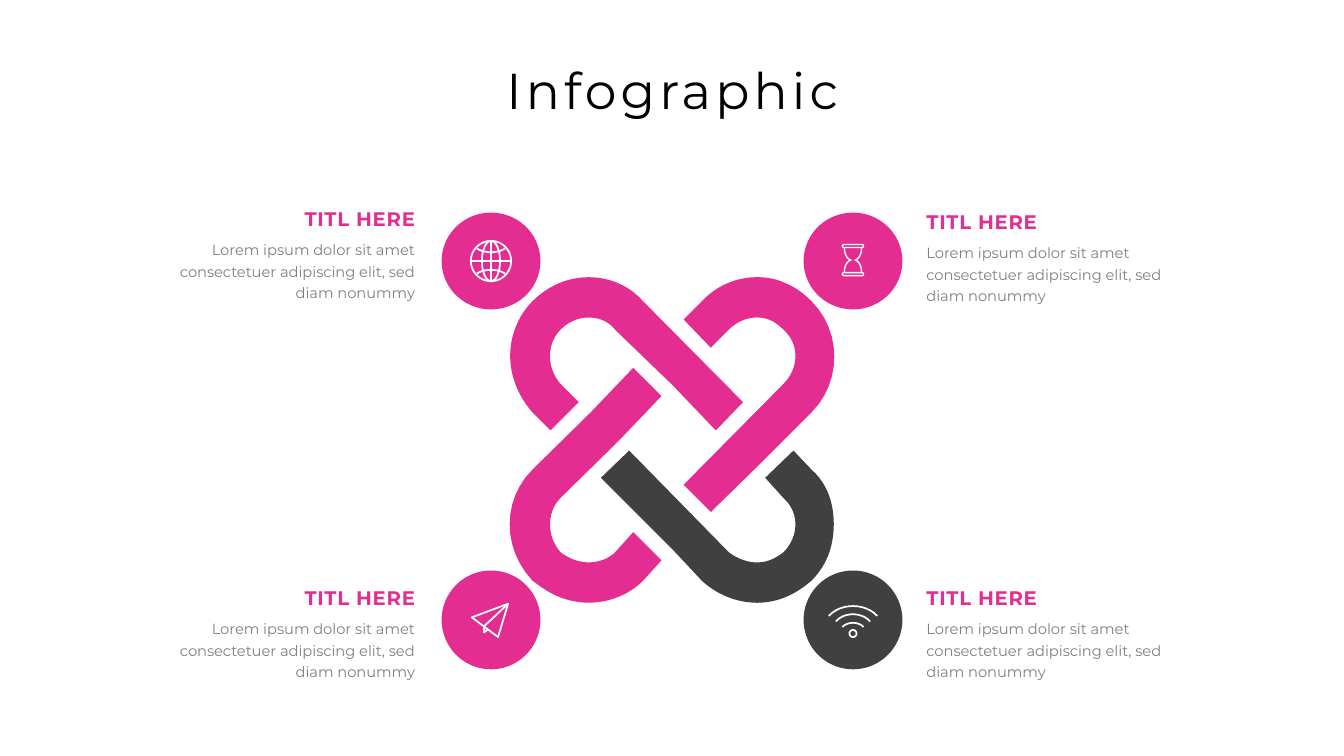
from dataclasses import dataclass

from pptx import Presentation
from pptx.dml.color import RGBColor
from pptx.enum.shapes import MSO_SHAPE
from pptx.enum.text import MSO_ANCHOR, MSO_AUTO_SIZE, PP_ALIGN
from pptx.util import Pt

OVAL = MSO_SHAPE.OVAL
LEFT, RIGHT, MID = PP_ALIGN.LEFT, PP_ALIGN.RIGHT, PP_ALIGN.CENTER
TOP = MSO_ANCHOR.TOP
GROW = MSO_AUTO_SIZE.SHAPE_TO_FIT_TEXT

# The slide is a grid of 1333 columns and 750 rows, 0.01 inch each
CELL = 9144
COLS, ROWS = 1333, 750
STEPS = 12
PINK, DARK, GREY, WHITE, BLACK = "E32D91", "404040", "808080", "FFFFFF", "000000"
FACE = "Montserrat"
HEAD = "TITL HERE"
BODY = "Lorem ipsum dolor sit amet consectetuer adipiscing elit, sed diam nonummy"


def tint(code: str) -> RGBColor:
    return RGBColor.from_string(code)


def cells(*nums: float) -> list[int]:
    return [round(n * CELL) for n in nums]


def ring(x: float, y: float, wide: float, high: float) -> str:
    """Path of an ellipse given its centre and radii."""
    a, b = wide * 0.55, high * 0.55
    return (f"M {x - wide} {y} C {x - wide} {y - b} {x - a} {y - high} {x} {y - high} "
            f"C {x + a} {y - high} {x + wide} {y - b} {x + wide} {y} "
            f"C {x + wide} {y + b} {x + a} {y + high} {x} {y + high} "
            f"C {x - a} {y + high} {x - wide} {y + b} {x - wide} {y} Z ")


def bar(y: float) -> str:
    """Path of a flat bar with round ends."""
    low = y + 3
    return (f"M -9 {y} L 9 {y} C 11 {y} 11 {low} 9 {low} "
            f"L -9 {low} C -11 {low} -11 {y} -9 {y} Z ")


def wave(wide: float, y: float, peak: float) -> str:
    """Path of an arc, even on both sides of the centre."""
    half = wide / 2
    return f"M {-wide} {y} C {-half} {peak} {half} {peak} {wide} {y} "


def side(sign: int) -> str:
    """Path of one wall of the hourglass."""
    far, near, neck = sign * 8.5, sign * 6, sign * 2
    return f"M {far} -13 C {far} -7 {near} -2 {neck} -1 C {near} 0 {far} 5 {far} 11 "


@dataclass
class Band:
    color: str
    route: str


@dataclass
class Node:
    x: float
    y: float
    high: float
    color: str
    icon: str
    pen: float
    text: float
    align: PP_ALIGN


BANDS = [
    Band(PINK, "M 638 299 C 624 283 604 275 584 275 C 564 275 544 283 528 299 "
               "C 514 313 506 333 506 353 C 506 373 514 393 528 409 L 546 427 L 574 399 "
               "L 556 381 C 542 365 542 341 556 327 C 564 319 574 315 584 315 "
               "C 594 315 604 319 610 327 L 668 383 L 710 427 L 737 399 Z"),
    Band(PINK, "M 610 548 C 604 554 594 558 584 558 C 574 558 564 554 556 548 "
               "C 542 532 542 508 556 494 L 614 437 L 656 393 L 628 365 L 586 409 "
               "L 528 466 C 498 496 498 544 528 576 C 536 582 544 588 554 592 "
               "C 564 596 574 598 584 598 C 604 598 624 590 638 576 L 656 556 L 628 528 Z"),
    Band(PINK, "M 805 299 C 797 291 789 285 779 281 C 771 277 761 275 751 275 "
               "C 731 275 711 283 696 299 L 678 317 L 705 345 L 723 327 "
               "C 731 319 741 315 751 315 C 761 315 769 319 777 327 "
               "C 793 341 793 365 777 381 L 678 481 L 705 508 L 749 465 L 805 409 "
               "C 835 379 835 329 805 299 Z"),
    Band(DARK, "M 805 466 L 787 447 L 759 474 L 777 494 C 793 508 793 532 777 548 "
               "C 769 554 761 558 751 558 C 741 558 731 554 723 548 L 624 447 L 596 474 "
               "L 640 518 L 668 546 L 696 576 C 711 590 731 598 751 598 "
               "C 771 598 789 590 805 576 C 821 560 827 540 827 520 "
               "C 827 500 821 480 805 466 Z"),
]

# Icon paths start from the centre of their disc
GLOBE = (ring(0, 0, 20, 20) + ring(0, 0, 9, 20) + "M 0 -20 L 0 20 M -20 0 L 20 0 "
         + wave(14, -12.5, -7.5) + wave(14, 12.5, 7.5))
GLASS = bar(-16.5) + bar(11.5) + side(-1) + side(1)
PLANE = ("M -19 -2.5 L 17 -16 L 7 17 L -7 6.5 Z "
         "M -7 6.5 L -7 12.5 L -3.5 10 M -7 6.5 L 16 -15")
WIFI = wave(24, -4, -17) + wave(17, 1.5, -8) + wave(10.5, 7, 1.5) + ring(0, 13.5, 3.5, 3.5)

WEST, EAST, NORTH, SOUTH = 487, 846, 259, 615
NODES = [
    Node(WEST, NORTH, 96, PINK, GLOBE, 1.25, 200, RIGHT),
    Node(EAST, SOUTH, 98, DARK, WIFI, 1.25, 576, LEFT),
    Node(WEST, SOUTH, 98, PINK, PLANE, 1.25, 576, RIGHT),
    Node(EAST, NORTH, 96, PINK, GLASS, 1, 203, LEFT),
]


def trace(route: str, x: float, y: float) -> list[tuple[list, bool]]:
    """Turn a path into runs of points, each open or closed."""
    runs, marks = [], iter(route.split())
    for mark in marks:
        if mark == "Z":
            runs[-1] = (runs[-1][0], True)
            continue
        count = 3 if mark == "C" else 1
        ends = [(x + float(next(marks)), y + float(next(marks))) for _ in range(count)]
        if mark == "M":
            runs.append((ends, False))
        elif mark == "L":
            runs[-1][0].extend(ends)
        else:
            dots = runs[-1][0]
            hull = [dots[-1], *ends]
            for step in range(1, STEPS + 1):
                t = step / STEPS
                u = 1 - t
                rates = (u ** 3, 3 * u * u * t, 3 * u * t * t, t ** 3)
                dots.append(tuple(sum(r * p[axis] for r, p in zip(rates, hull))
                                  for axis in (0, 1)))
    return runs


def paint(shape, color: str) -> None:
    shape.shadow.inherit = False
    shape.fill.solid()
    shape.fill.fore_color.rgb = tint(color)
    shape.line.fill.background()


def draw(slide, route: str, x: float = 0, y: float = 0):
    runs = trace(route, x, y)
    pen = slide.shapes.build_freeform(*cells(*runs[0][0][0]), scale=1.0)
    for place, (dots, shut) in enumerate(runs):
        if place:
            pen.move_to(*cells(*dots[0]))
        pen.add_line_segments([cells(*dot) for dot in dots[1:]], close=shut)
    return pen.convert_to_shape()


def write(shape, text: str, align: PP_ALIGN, color: str, form: dict,
          track: int = 0, lead: float = 1.0, wrap: bool = True) -> None:
    frame = shape.text_frame
    frame.text = text
    for key, value in {"word_wrap": wrap, "auto_size": GROW, "vertical_anchor": TOP}.items():
        setattr(frame, key, value)
    para = frame.paragraphs[0]
    para.alignment, para.line_spacing = align, lead
    run = para.runs[0]
    for key, value in {"name": FACE, **form}.items():
        setattr(run.font, key, value)
    run.font.color.rgb = tint(color)
    if track:
        run._r.get_or_add_rPr().set("spc", str(track))


def place(slide, node: Node) -> None:
    # Disc and icon
    wide = 98
    box = cells(node.x - wide / 2, node.y - node.high / 2, wide, node.high)
    paint(slide.shapes.add_shape(OVAL, *box), node.color)
    icon = draw(slide, node.icon, node.x, node.y)
    icon.shadow.inherit = False
    icon.fill.background()
    icon.line.color.rgb = tint(WHITE)
    icon.line.width = Pt(node.pen)
    # Heading and body share the edge next to the disc
    rows = [(HEAD, 0, 209, 34, PINK, {"size": Pt(14), "bold": True}, 50, 1.0),
            (BODY, 31, 257, 74, GREY, {"size": Pt(10.5)}, 0, 1.2)]
    for text, down, span, high, color, form, track, lead in rows:
        left = 909 if node.align == LEFT else 421.5 - span
        box = slide.shapes.add_textbox(*cells(left, node.text + down, span, high))
        write(box, text, node.align, color, form, track, lead)


def main() -> None:
    deck = Presentation()
    deck.slide_width, deck.slide_height = cells(COLS, ROWS)
    slide = deck.slides.add_slide(deck.slide_layouts[5])
    # Title
    title = slide.shapes.title
    title.left, title.top, title.width, title.height = cells(490, 54, 354, 71)
    write(title, "Infographic", MID, BLACK, {"size": Pt(36)}, 300, wrap=False)
    # Knot, then the four corners
    for band in BANDS:
        paint(draw(slide, band.route), band.color)
    for node in NODES:
        place(slide, node)
    deck.save("out.pptx")


if __name__ == "__main__":
    main()
